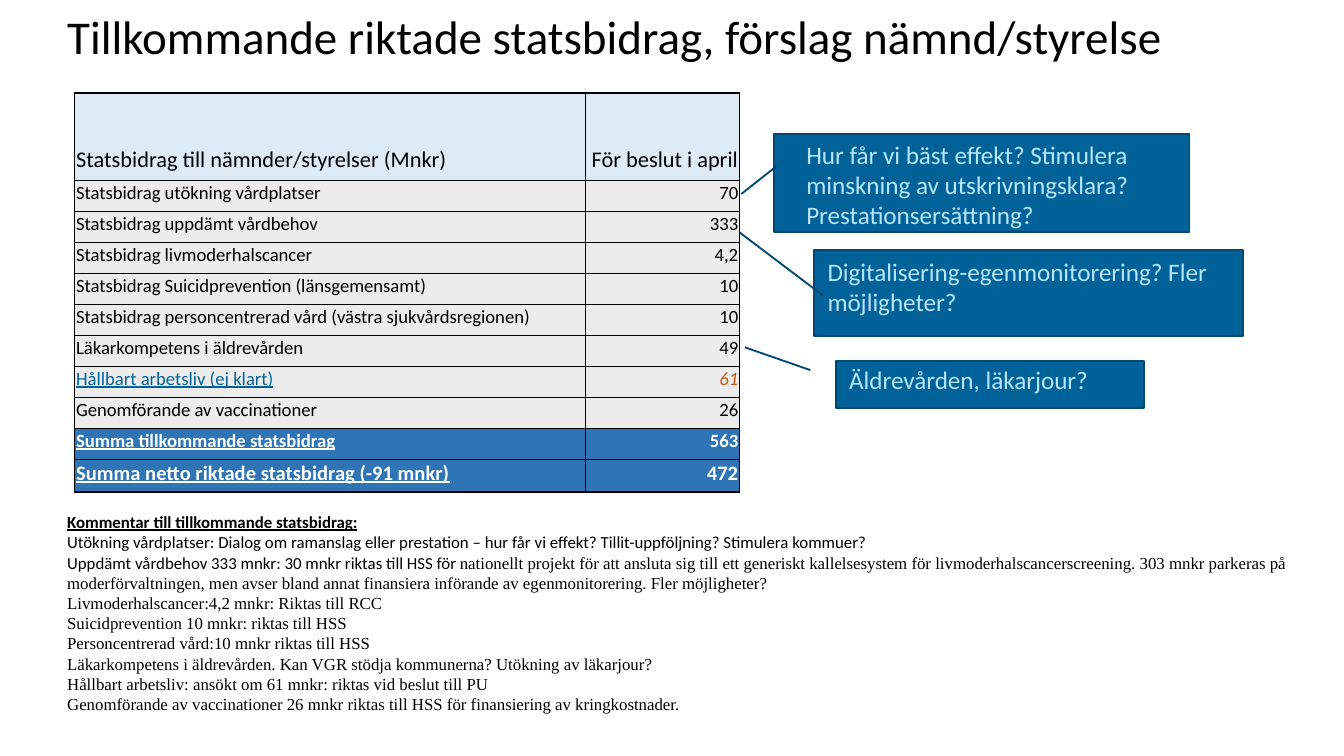
from lxml.etree import SubElement
from pptx import Presentation
from pptx.dml.color import RGBColor
from pptx.enum.shapes import MSO_SHAPE as Shape
from pptx.enum.text import MSO_ANCHOR as Anchor, PP_ALIGN as Align
from pptx.oxml.ns import qn
from pptx.util import Cm, Pt

BLACK = RGBColor(0x00, 0x00, 0x00)
WHITE = RGBColor(0xFF, 0xFF, 0xFF)
PALE_BLUE = RGBColor(0xDD, 0xEB, 0xF7)
GREY = RGBColor(0xEC, 0xEC, 0xEC)
SUM_BLUE = RGBColor(0x2F, 0x75, 0xB5)
CALLOUT_BLUE = RGBColor(0x00, 0x62, 0x98)
CALLOUT_EDGE = RGBColor(0x00, 0x49, 0x70)
CALLOUT_TEXT = RGBColor(0xB7, 0xE6, 0xFF)
ORANGE = RGBColor(0xC6, 0x59, 0x11)
SANS, SERIF = "Calibri", "Times New Roman"

TITLE = "Tillkommande riktade statsbidrag, förslag nämnd/styrelse"

GRANTS = [
    ("Statsbidrag till nämnder/styrelser (Mnkr)", "För beslut i april", "header"),
    ("Statsbidrag utökning vårdplatser", "70", "item"),
    ("Statsbidrag uppdämt vårdbehov", "333", "item"),
    ("Statsbidrag livmoderhalscancer", "4,2", "item"),
    ("Statsbidrag Suicidprevention (länsgemensamt)", "10", "item"),
    ("Statsbidrag personcentrerad vård (västra sjukvårdsregionen)", "10", "item"),
    ("Läkarkompetens i äldrevården", "49", "item"),
    ("Hållbart arbetsliv (ej klart)", "61", "pending"),
    ("Genomförande av vaccinationer", "26", "item"),
    ("Summa tillkommande statsbidrag", "563", "sum"),
    ("Summa netto riktade statsbidrag (-91 mnkr)", "472", "net"),
]
# row height in cm, fill, text size, label style, value style
ROW_STYLES = {
    "header": (1.65, PALE_BLUE, 12, {}, {}),
    "item": (0.57, GREY, 10, {}, {}),
    "pending": (0.57, GREY, 10, {"color": CALLOUT_BLUE, "underline": True},
                {"color": ORANGE, "italic": True}),
    "sum": (0.57, SUM_BLUE, 10, {"color": WHITE, "bold": True, "underline": True},
            {"color": WHITE, "bold": True}),
    "net": (0.61, SUM_BLUE, 11, {"color": WHITE, "bold": True, "underline": True},
            {"color": WHITE, "bold": True}),
}
COLUMN_WIDTHS = (9.65, 2.92)

# box in cm, pointer as (y, x) pairs relative to the box, text place in cm, lines
CALLOUTS = [
    ((15.8, 6.83, 5.82, 0.89), (0.188, -0.083, -0.297, -0.296), (15.8, 6.76),
     ["Äldrevården, läkarjour?"]),
    ((15.39, 4.72, 8.1, 1.63), (0.534, 0.021, -0.263, -0.191), (15.39, 4.72),
     ["Digitalisering-egenmonitorering? Fler möjligheter?"]),
    ((14.63, 2.54, 7.85, 1.85), (0.329, 0.005, 0.61, -0.079), (14.99, 2.51),
     ["Hur får vi bäst effekt? Stimulera minskning av utskrivningsklara?",
      "Prestationsersättning?"]),
]

COMMENTS = [
    [("Kommentar till tillkommande statsbidrag:", SANS, {"bold": True, "underline": True})],
    [("Utökning vårdplatser: Dialog om ramanslag eller prestation – hur får vi effekt? "
      "Tillit-uppföljning? Stimulera kommuer?", SANS, {})],
    [("Uppdämt vårdbehov 333 mnkr: 30 mnkr riktas till HSS för ", SANS, {}),
     ("nationellt projekt för att ansluta sig till ett generiskt kallelsesystem för "
      "livmoderhalscancerscreening. 303 mnkr parkeras på moderförvaltningen, men avser "
      "bland annat finansiera införande av egenmonitorering. Fler möjligheter?", SERIF, {})],
    [("Livmoderhalscancer:4,2 mnkr: Riktas till RCC", SERIF, {})],
    [("Suicidprevention 10 mnkr: riktas till HSS", SERIF, {})],
    [("Personcentrerad vård:10 mnkr riktas till HSS", SERIF, {})],
    [("Läkarkompetens i äldrevården. Kan VGR stödja kommunerna? Utökning av läkarjour?",
      SERIF, {})],
    [("Hållbart arbetsliv: ansökt om 61 mnkr: riktas vid beslut till PU", SERIF, {})],
    [("Genomförande av vaccinationer 26 mnkr riktas till HSS för finansiering av "
      "kringkostnader.", SERIF, {})],
]


def add_span(para, text, size, color=BLACK, name=SANS, **emphasis):
    span = para.add_run()
    span.text = text
    span.font.size = Pt(size)
    span.font.name = name
    span.font.color.rgb = color
    for key in ("bold", "italic", "underline"):
        setattr(span.font, key, emphasis.get(key, False))


def add_text_frame(page, left, top, width, height):
    box = page.shapes.add_textbox(Cm(left), Cm(top), Cm(width), Cm(height))
    box.text_frame.word_wrap = True
    return box.text_frame


def set_borders(cell, **widths):
    """Draw black cell borders; the sides are named L, R, T and B, in points."""
    properties = cell._tc.get_or_add_tcPr()
    for side in "LRTB":
        line = SubElement(properties, qn(f"a:ln{side}"), w=str(Pt(widths[side])))
        fill = SubElement(line, qn("a:solidFill"))
        SubElement(fill, qn("a:srgbClr"), val=str(BLACK))


def add_grant_table(page):
    heights = [ROW_STYLES[kind][0] for _, _, kind in GRANTS]
    last = len(GRANTS) - 1
    table = page.shapes.add_table(
        len(GRANTS), len(COLUMN_WIDTHS), Cm(1.41), Cm(1.76),
        Cm(sum(COLUMN_WIDTHS)), Cm(sum(heights))).table
    for column, width in zip(table.columns, COLUMN_WIDTHS):
        column.width = Cm(width)
    for r, (label, value, kind) in enumerate(GRANTS):
        height, fill, size, label_style, value_style = ROW_STYLES[kind]
        table.rows[r].height = Cm(height)
        for c, (text, style) in enumerate(((label, label_style), (value, value_style))):
            cell = table.cell(r, c)
            set_borders(cell, L=0.5 if c else 1, R=0.5,
                        T=0.5 if r else 1, B=1 if r == last else 0.5)
            cell.fill.solid()
            cell.fill.fore_color.rgb = fill
            cell.vertical_anchor = Anchor.BOTTOM
            cell.margin_left = cell.margin_right = cell.margin_top = Cm(0.03)
            cell.margin_bottom = Cm(0.13)
            para = cell.text_frame.paragraphs[0]
            para.alignment = Align.RIGHT if c else Align.LEFT
            add_span(para, text, size, **style)


def add_callout(page, place, pointer):
    callout = page.shapes.add_shape(Shape.LINE_CALLOUT_1, *map(Cm, place))
    callout.shadow.inherit = False
    for i, value in enumerate(pointer):
        callout.adjustments[i] = value
    callout.fill.solid()
    callout.fill.fore_color.rgb = CALLOUT_BLUE
    callout.line.color.rgb = CALLOUT_EDGE
    callout.line.width = Pt(1)


def main():
    deck = Presentation()
    deck.slide_width, deck.slide_height = Cm(25.4), Cm(14.29)
    page = deck.slides.add_slide(deck.slide_layouts[6])

    for place, pointer, _, _ in CALLOUTS:
        add_callout(page, place, pointer)

    title = add_text_frame(page, 1.27, -0.25, 22.43, 2)
    title.margin_left = title.margin_right = title.margin_top = title.margin_bottom = 0
    title.vertical_anchor = Anchor.MIDDLE
    title.paragraphs[0].line_spacing = 0.9
    add_span(title.paragraphs[0], TITLE, 25.2)

    comments = add_text_frame(page, 1.02, 9.55, 24.38, 4.7)
    for i, spans in enumerate(COMMENTS):
        para = comments.add_paragraph() if i else comments.paragraphs[0]
        for text, name, emphasis in spans:
            add_span(para, text, 9, name=name, **emphasis)

    add_grant_table(page)

    for (_, _, _, height), _, (left, top), lines in CALLOUTS:
        para = add_text_frame(page, left, top, 8.26, height).paragraphs[0]
        for i, line in enumerate(lines):
            if i:
                para.add_line_break()
            add_span(para, line, 13.5, CALLOUT_TEXT)

    deck.save("out.pptx")


if __name__ == "__main__":
    main()
